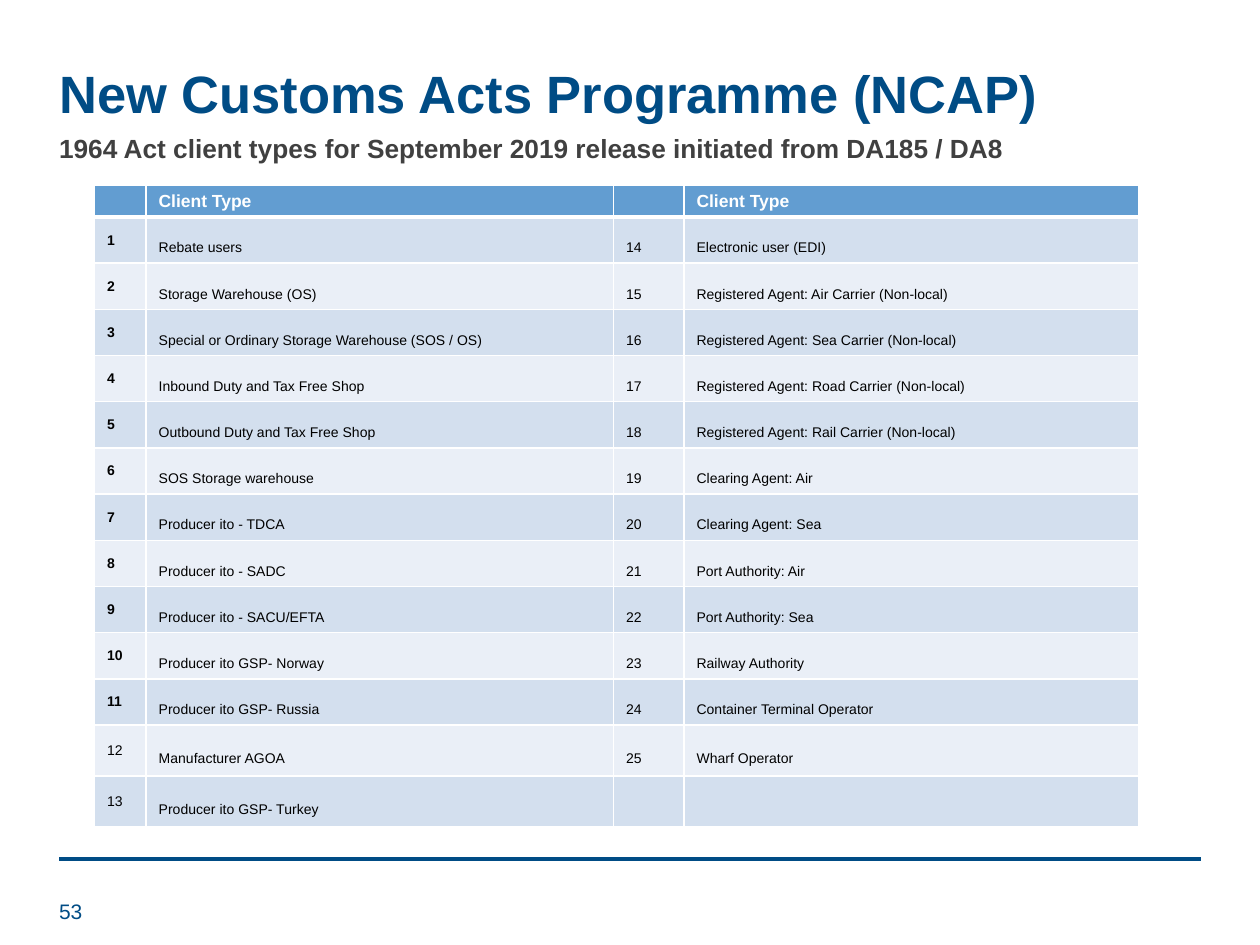
from lxml.etree import SubElement
from pptx import Presentation
from pptx.dml.color import RGBColor
from pptx.enum.shapes import MSO_CONNECTOR
from pptx.enum.text import MSO_ANCHOR, PP_ALIGN
from pptx.oxml.ns import qn
from pptx.util import Pt

TITLE = "New Customs Acts Programme (NCAP)"
SUB = "1964 Act client types for September 2019 release initiated from DA185 / DA8"
PAGE = "53"
HEAD = "Client Type"
TYPES = [
    "Rebate users",
    "Storage Warehouse (OS)",
    "Special or Ordinary Storage Warehouse (SOS / OS)",
    "Inbound Duty and Tax Free Shop",
    "Outbound Duty and Tax Free Shop",
    "SOS Storage warehouse",
    "Producer ito - TDCA",
    "Producer ito - SADC",
    "Producer ito - SACU/EFTA",
    "Producer ito GSP- Norway",
    "Producer ito GSP- Russia",
    "Manufacturer AGOA",
    "Producer ito GSP- Turkey",
    "Electronic user (EDI)",
    "Registered Agent: Air Carrier (Non-local)",
    "Registered Agent: Sea Carrier (Non-local)",
    "Registered Agent: Road Carrier (Non-local)",
    "Registered Agent: Rail Carrier (Non-local)",
    "Clearing Agent: Air",
    "Clearing Agent: Sea",
    "Port Authority: Air",
    "Port Authority: Sea",
    "Railway Authority",
    "Container Terminal Operator",
    "Wharf Operator",
]
COLORS = {
    "navy": "004C85", "grey": "404040", "head": "629DD1", "odd": "D3DFEE",
    "even": "EAEFF7", "white": "FFFFFF", "black": "000000",
}
FONT = "Arial"
LEFT, WIDE = 26.64, 620.64
COLS = [29.5, 267.1, 40.3, 259.9]
HALF = 13
BOLD = 11  # leading row numbers set in bold
ROWS = [18] + [25.4] * BOLD + [29.1] * (HALF - BOLD)


def rgb(name):
    return RGBColor.from_string(COLORS[name])


def write(frame, text, size, color, bold=False, lines=None):
    para = frame.paragraphs[0]
    para.alignment = PP_ALIGN.LEFT
    if lines:
        para.line_spacing = lines
    run = para.add_run()
    run.text = text
    font = run.font
    font.name, font.size, font.bold = FONT, Pt(size), bold
    font.color.rgb = rgb(color)


def place(shape, left, top, width, height, anchor):
    shape.left, shape.top = Pt(left), Pt(top)
    shape.width, shape.height = Pt(width), Pt(height)
    shape.text_frame.word_wrap = True
    shape.text_frame.vertical_anchor = anchor
    return shape.text_frame


def border(cell, top, bottom):
    """Give the cell white edges; must run before its fill is set."""
    props = cell._tc.get_or_add_tcPr()
    for side, width in zip("LRTB", (1, 1, top, bottom)):
        edge = SubElement(props, qn(f"a:ln{side}"), w=str(Pt(width)))
        fill = SubElement(edge, qn("a:solidFill"))
        SubElement(fill, qn("a:srgbClr"), val=COLORS["white"])


def grid():
    """Number the types down two halves, side by side."""
    items = [(str(i), name) for i, name in enumerate(TYPES, 1)]
    right = items[HALF:] + [("", "")] * (2 * HALF - len(items))
    return [("", HEAD) * 2] + [a + b for a, b in zip(items[:HALF], right)]


def fill_cell(cell, text, row, col):
    border(cell, 3 if row == 1 else 1, 1 if row else 3)
    cell.fill.solid()
    cell.fill.fore_color.rgb = rgb(("odd" if row % 2 else "even") if row else "head")
    cell.vertical_anchor = MSO_ANCHOR.MIDDLE
    if row == 0:
        cell.margin_top = cell.margin_bottom = Pt(3)
    if not text:
        SubElement(cell.text_frame.paragraphs[0]._p, qn("a:endParaRPr"), sz="800")
    elif row == 0:
        write(cell.text_frame, text, 10, "white", True)
    else:
        bold = col == 0 and row <= BOLD
        write(cell.text_frame, text, 8, "black", bold, 2.0 if col else None)


def add_types(slide):
    frame = slide.shapes.add_table(
        len(ROWS), len(COLS), Pt(54), Pt(106), Pt(sum(COLS)), Pt(sum(ROWS)))
    table = frame.table
    table.horz_banding = False
    for col, width in zip(table.columns, COLS):
        col.width = Pt(width)
    for row, height in zip(table.rows, ROWS):
        row.height = Pt(height)
    for r, texts in enumerate(grid()):
        for c, text in enumerate(texts):
            fill_cell(table.cell(r, c), text, r, c)


def add_rule(slide):
    rule = slide.shapes.add_connector(
        MSO_CONNECTOR.STRAIGHT, Pt(33.84), Pt(491), Pt(686.16), Pt(491))
    rule.line.width = Pt(2)
    rule.line.color.rgb = rgb("navy")
    SubElement(rule._element.spPr, qn("a:effectLst"))


def main():
    deck = Presentation()
    deck.slide_width, deck.slide_height = Pt(720), Pt(540)
    slide = deck.slides.add_slide(deck.slide_layouts[5])
    add_rule(slide)
    page = slide.shapes.add_textbox(0, 0, 0, 0)
    write(place(page, LEFT, 506.2, 162, 28.8, MSO_ANCHOR.MIDDLE), PAGE, 12, "navy")
    title = place(slide.shapes.title, LEFT, 34.56, WIDE, 41.76, MSO_ANCHOR.MIDDLE)
    write(title, TITLE, 30, "navy", True, 0.9)
    sub = slide.shapes.add_textbox(0, 0, 0, 0)
    write(place(sub, LEFT, 77.04, WIDE, 34.56, MSO_ANCHOR.TOP), SUB, 15, "grey", True, 0.7)
    add_types(slide)
    deck.save("out.pptx")


if __name__ == "__main__":
    main()
